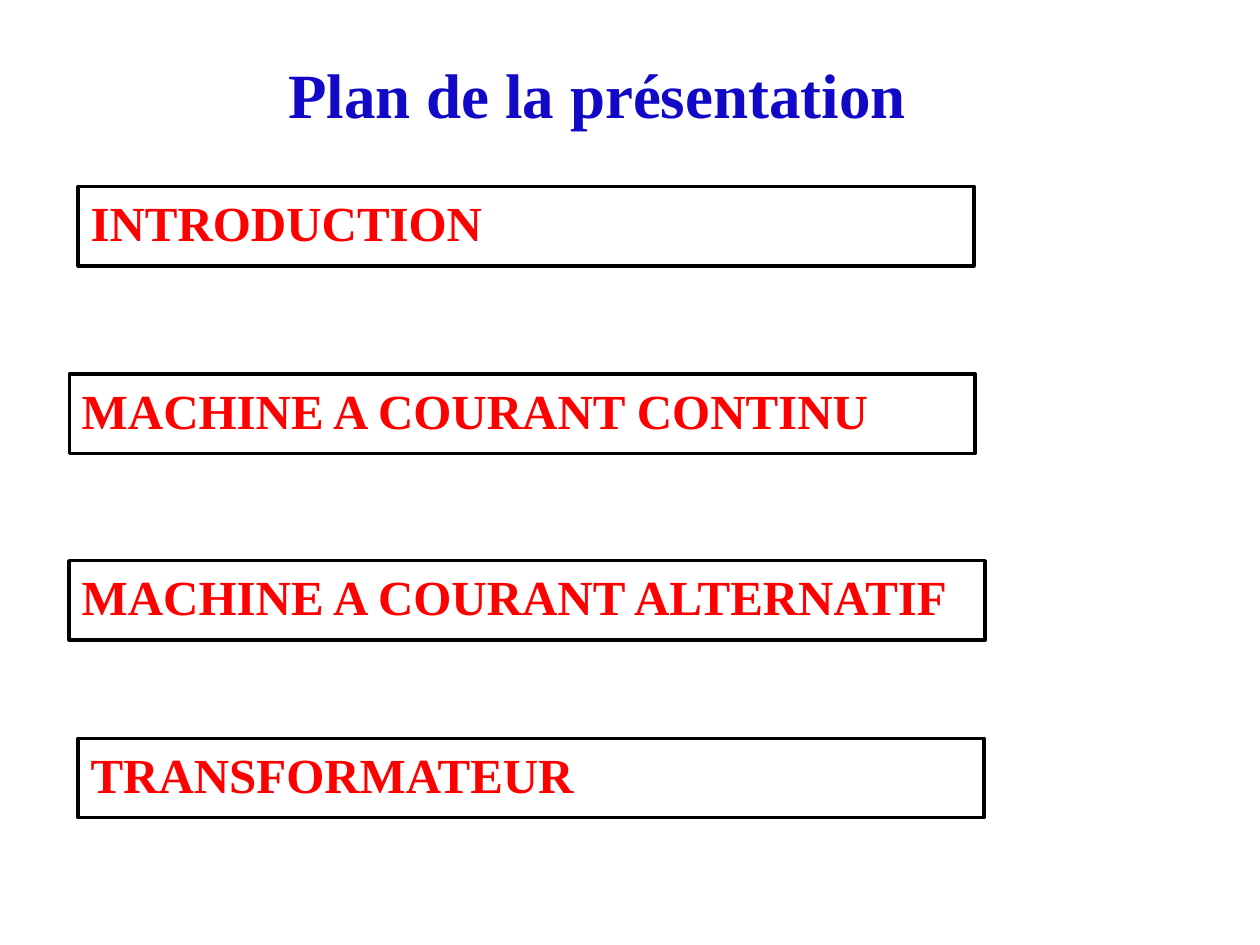
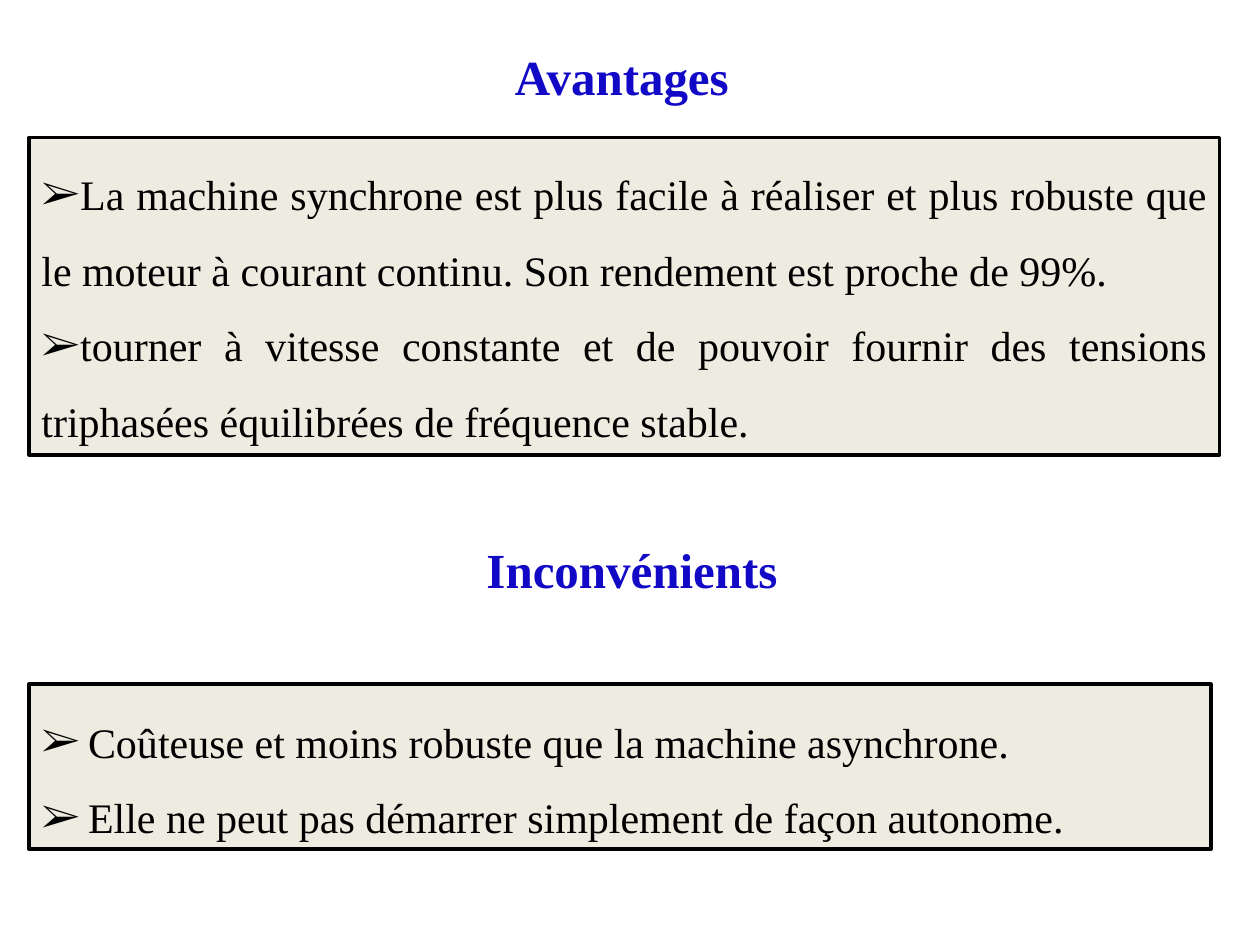
from pptx import Presentation
from pptx.dml.color import RGBColor
from pptx.enum.shapes import MSO_SHAPE
from pptx.enum.text import MSO_ANCHOR, PP_ALIGN
from pptx.oxml.ns import qn
from pptx.util import Inches, Pt
from lxml import etree

RECT = MSO_SHAPE.RECTANGLE
TOP, MIDDLE = MSO_ANCHOR.TOP, MSO_ANCHOR.MIDDLE
LEFT, CENTER, JUSTIFY = PP_ALIGN.LEFT, PP_ALIGN.CENTER, PP_ALIGN.JUSTIFY

# Shared style
FONT = "Times New Roman"
BLUE, RED, BLACK, WHITE, CREAM = "1209C7", "FF0000", "000000", "FFFFFF", "EEECE1"
BULLET = "➢"
HANGING = 0.37

# Content: places are left, top, width, height in inches
PLAN_TITLE = ("Plan de la présentation", (2.19, 0.39, 6.33, 0.71))
PLAN_ITEMS = [
    ("INTRODUCTION", (0.62, 1.48, 7.11, 0.63)),
    ("MACHINE A COURANT CONTINU", (0.55, 2.97, 7.19, 0.63)),
    ("MACHINE A COURANT ALTERNATIF", (0.55, 4.45, 7.27, 0.63)),
    ("TRANSFORMATEUR", (0.62, 5.86, 7.19, 0.63)),
]
PROS_TITLE = ("Avantages", (2.84, 0.33, 4.19, 0.55))
PROS = ([
    "La machine synchrone est plus facile à réaliser et plus robuste que le moteur "
    "à courant continu. Son rendement est proche de 99%.",
    "tourner à vitesse constante et de pouvoir fournir des tensions triphasées "
    "équilibrées de fréquence stable.",
], (0.23, 1.09, 9.45, 2.52), 0)
CONS_TITLE = ("Inconvénients", (2.92, 4.24, 4.19, 0.55))
CONS = ([
    "Coûteuse et moins robuste que la machine asynchrone.",
    "Elle ne peut pas démarrer simplement de façon autonome.",
], (0.23, 5.43, 9.38, 1.31), HANGING)


def rgb(value):
    return RGBColor.from_string(value)


def inches(place):
    return [Inches(v) for v in place]


def write(p, text, size, color, bold=True, align=LEFT):
    p.alignment = align
    r = p.add_run()
    r.text = text
    r.font.name, r.font.size, r.font.bold = FONT, Pt(size), bold
    r.font.color.rgb = rgb(color)


def add_bullet(p, hanging):
    pPr = p._p.get_or_add_pPr()
    pPr.set("marL", str(Inches(hanging)))
    pPr.set("indent", str(-Inches(hanging)))
    etree.SubElement(pPr, qn("a:buFont"), typeface=FONT)
    etree.SubElement(pPr, qn("a:buChar"), char=BULLET)


def set_heading(sp, text, size, align, anchor):
    tf = sp.text_frame
    tf.word_wrap, tf.vertical_anchor = True, anchor
    write(tf.paragraphs[0], text, size, BLUE, align=align)


def add_titled_slide(prs, title, size, align, anchor):
    s = prs.slides.add_slide(prs.slide_layouts[5])
    text, place = title
    sp = s.shapes.title
    sp.left, sp.top, sp.width, sp.height = inches(place)
    set_heading(sp, text, size, align, anchor)
    return s


def add_frame(s, place, fill, anchor):
    sp = s.shapes.add_shape(RECT, *inches(place))
    sp.shadow.inherit = False
    sp.fill.solid()
    sp.fill.fore_color.rgb = rgb(fill)
    sp.line.color.rgb = rgb(BLACK)
    sp.line.width = Pt(2)
    sp.text_frame.word_wrap = True
    sp.text_frame.vertical_anchor = anchor
    return sp.text_frame


def add_bullet_frame(s, block, anchor):
    lines, place, hanging = block
    tf = add_frame(s, place, CREAM, anchor)
    for i, line in enumerate(lines):
        p = tf.add_paragraph() if i else tf.paragraphs[0]
        p.line_spacing = 1.5
        add_bullet(p, hanging)
        write(p, line, 24, BLACK, bold=False, align=JUSTIFY)


def main():
    prs = Presentation()
    prs.slide_width, prs.slide_height = Inches(10), Inches(7.5)

    # Plan
    s = add_titled_slide(prs, PLAN_TITLE, 36, LEFT, TOP)
    for text, place in PLAN_ITEMS:
        tf = add_frame(s, place, WHITE, TOP)
        write(tf.paragraphs[0], text, 28, RED)

    # Advantages and drawbacks
    s = add_titled_slide(prs, PROS_TITLE, 28, CENTER, MIDDLE)
    add_bullet_frame(s, PROS, TOP)
    text, place = CONS_TITLE
    set_heading(s.shapes.add_textbox(*inches(place)), text, 28, CENTER, MIDDLE)
    add_bullet_frame(s, CONS, MIDDLE)

    prs.save("out.pptx")


if __name__ == "__main__":
    main()
